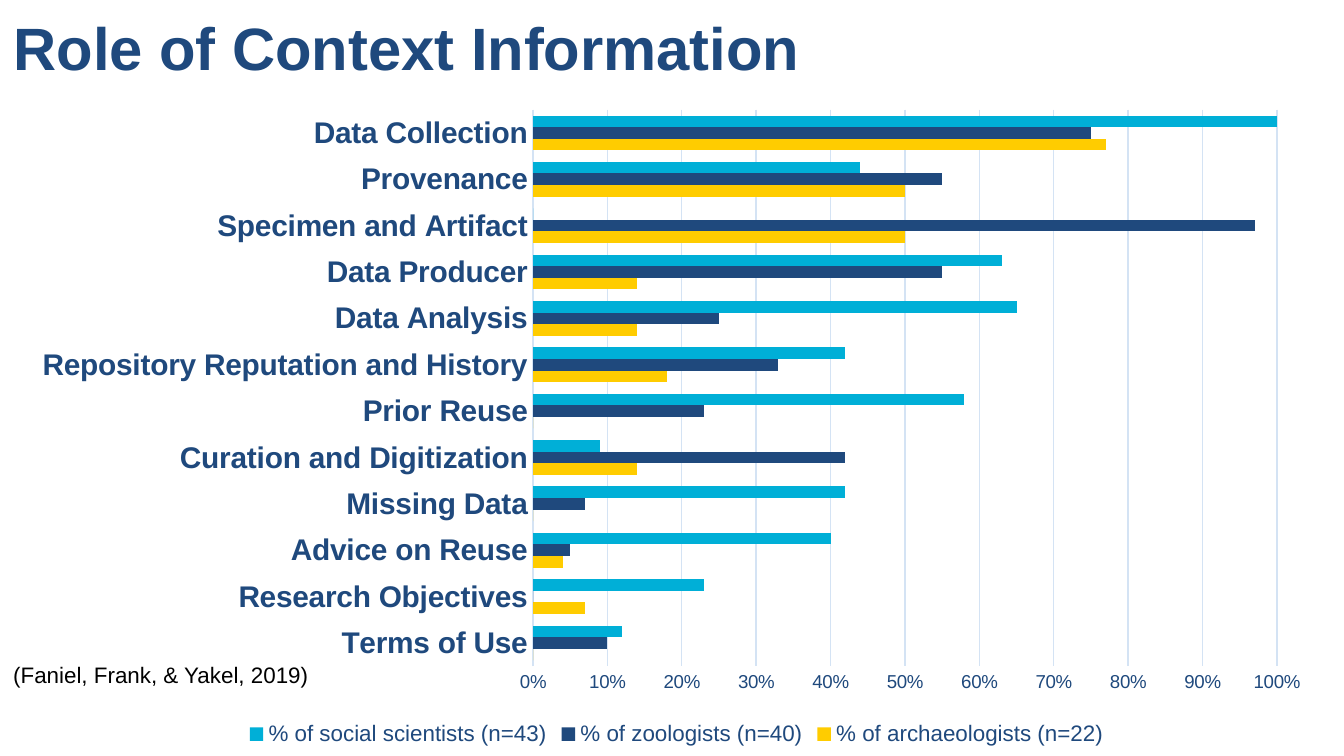
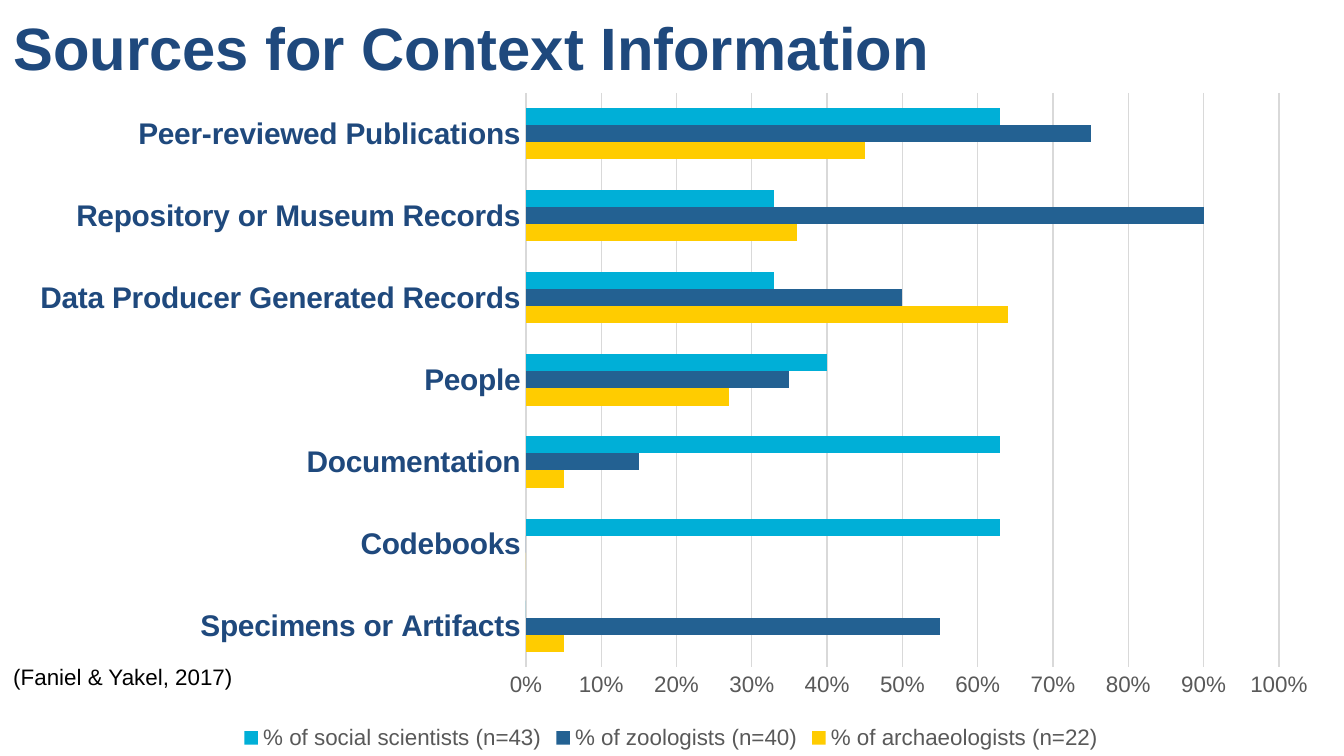
from dataclasses import dataclass

from lxml.etree import Element, SubElement
from pptx import Presentation
from pptx.chart.chart import Chart
from pptx.chart.data import CategoryChartData
from pptx.dml.color import RGBColor
from pptx.enum.chart import XL_CHART_TYPE, XL_LEGEND_POSITION, XL_TICK_MARK
from pptx.enum.text import MSO_ANCHOR, MSO_AUTO_SIZE, PP_ALIGN
from pptx.oxml.ns import qn
from pptx.slide import Slide
from pptx.text.text import Font
from pptx.util import Inches, Pt

WIDE, HIGH = Inches(10), Inches(5.625)
TITLE_ONLY = 5


@dataclass(frozen=True)
class Theme:
    face: str = "Arial"
    navy: str = "1F497D"
    steel: str = "236192"
    cyan: str = "00AFD7"
    gold: str = "FFCC00"
    ink: str = "000000"
    gray: str = "595959"
    pale: str = "D4E3F4"
    silver: str = "D9D9D9"
    head: int = 32
    label: int = 16
    note: int = 12
    tick: int = 10
    rule: float = 0.75


THEME = Theme()


@dataclass(frozen=True)
class Area:
    """A box in percent of the slide's width and height."""
    left: float
    top: float
    width: float
    height: float

    def lengths(self) -> tuple[int, int, int, int]:
        return (int(WIDE * self.left / 100), int(HIGH * self.top / 100),
                int(WIDE * self.width / 100), int(HIGH * self.height / 100))


@dataclass(frozen=True)
class Look:
    """What sets one chart's style apart."""
    middle: str
    text: str
    grid: str
    ticks: int
    gap: int


@dataclass(frozen=True)
class Page:
    title: str
    cite: str
    head: Area
    plot: Area
    foot: Area
    look: Look
    rows: dict[str, tuple[int, int, int]]


# Groups run top to bottom, as do the percentages in each row
GROUPS = ("% of social scientists (n=43)", "% of zoologists (n=40)",
          "% of archaeologists (n=22)")
# Inner plot as shares of the chart frame
INNER = {"x": 0.39, "y": 0.02, "w": 0.57, "h": 0.85}

PAGES = (
    Page(
        "Role of Context Information",
        "(Faniel, Frank, & Yakel, 2019)",
        Area(0, 0.5, 92.3, 13.3),
        Area(1.8, 12.8, 97.1, 86.6),
        Area(0, 86.6, 24.7, 5.3),
        Look(THEME.navy, THEME.navy, THEME.pale, THEME.tick, 100),
        {
            "Data Collection": (100, 75, 77),
            "Provenance": (44, 55, 50),
            "Specimen and Artifact": (0, 97, 50),
            "Data Producer": (63, 55, 14),
            "Data Analysis": (65, 25, 14),
            "Repository Reputation and History": (42, 33, 18),
            "Prior Reuse": (58, 23, 0),
            "Curation and Digitization": (9, 42, 14),
            "Missing Data": (42, 7, 0),
            "Advice on Reuse": (40, 5, 4),
            "Research Objectives": (23, 0, 7),
            "Terms of Use": (12, 10, 0),
        },
    ),
    Page(
        "Sources for Context Information",
        "(Faniel & Yakel, 2017)",
        Area(0, 0.5, 70.7, 11.4),
        Area(0.8, 10.5, 98.3, 89.4),
        Area(0, 86.8, 18.5, 5.3),
        Look(THEME.steel, THEME.gray, THEME.silver, THEME.note, 182),
        {
            "Peer-reviewed Publications": (63, 75, 45),
            "Repository or Museum Records": (33, 90, 36),
            "Data Producer Generated Records": (33, 50, 64),
            "People": (40, 35, 27),
            "Documentation": (63, 15, 5),
            "Codebooks": (63, 0, 0),
            "Specimens or Artifacts": (0, 55, 5),
        },
    ),
)


def set_font(font: Font, size: int, color: str, bold: bool = False) -> None:
    font.name, font.size, font.bold = THEME.face, Pt(size), bold
    font.color.rgb = RGBColor.from_string(color)


def fill_text(shape, area: Area, text: str, size: int, color: str,
              bold: bool = False) -> None:
    shape.left, shape.top, shape.width, shape.height = area.lengths()
    frame = shape.text_frame
    frame.text = text
    frame.word_wrap = True
    frame.auto_size = MSO_AUTO_SIZE.NONE
    frame.vertical_anchor = MSO_ANCHOR.TOP
    line = frame.paragraphs[0]
    line.alignment = PP_ALIGN.LEFT
    set_font(line.font, size, color, bold)


def set_line(line, color: str) -> None:
    line.color.rgb = RGBColor.from_string(color)
    line.width = Pt(THEME.rule)


def place_plot(chart: Chart) -> None:
    area = chart._chartSpace.chart.plotArea
    for old in area.findall(qn("c:layout")):
        area.remove(old)
    layout = Element(qn("c:layout"))
    manual = SubElement(layout, qn("c:manualLayout"))
    parts = {"layoutTarget": "inner", "xMode": "edge", "yMode": "edge", **INNER}
    for name, value in parts.items():
        SubElement(manual, qn(f"c:{name}")).set("val", str(value))
    area.insert(0, layout)


def style_axes(chart: Chart, look: Look) -> None:
    names, scale = chart.category_axis, chart.value_axis
    for axis in (names, scale):
        axis.major_tick_mark = axis.minor_tick_mark = XL_TICK_MARK.NONE
    names.has_major_gridlines = False
    set_font(names.tick_labels.font, THEME.label, THEME.navy, True)
    set_line(names.format.line, look.grid)

    scale.minimum_scale, scale.maximum_scale, scale.major_unit = 0, 1, 0.1
    scale.has_major_gridlines = True
    set_line(scale.major_gridlines.format.line, look.grid)
    scale.format.line.fill.background()
    scale.tick_labels.number_format = "0%"
    scale.tick_labels.number_format_is_linked = False
    set_font(scale.tick_labels.font, look.ticks, look.text)


def add_bars(slide: Slide, page: Page) -> None:
    look = page.look
    # Bars stack upward from the axis, so both orders are turned round
    data = CategoryChartData(number_format="0%")
    data.categories = list(reversed(page.rows))
    columns = list(zip(*reversed(page.rows.values())))
    for name, column in reversed(list(zip(GROUPS, columns))):
        data.add_series(name, [value / 100 for value in column])
    chart = slide.shapes.add_chart(
        XL_CHART_TYPE.BAR_CLUSTERED, *page.plot.lengths(), data).chart
    chart.has_title = False
    set_font(chart.font, THEME.tick, THEME.ink)

    # Bars
    bars = chart.plots[0]
    bars.gap_width, bars.overlap, bars.vary_by_categories = look.gap, 0, False
    for group, color in zip(bars.series, (THEME.gold, look.middle, THEME.cyan)):
        group.format.fill.solid()
        group.format.fill.fore_color.rgb = RGBColor.from_string(color)

    # Legend
    chart.has_legend = True
    chart.legend.position = XL_LEGEND_POSITION.BOTTOM
    chart.legend.include_in_layout = False
    set_font(chart.legend.font, THEME.note, look.text)

    style_axes(chart, look)
    place_plot(chart)


def add_page(deck, page: Page) -> None:
    slide = deck.slides.add_slide(deck.slide_layouts[TITLE_ONLY])
    add_bars(slide, page)
    fill_text(slide.shapes.title, page.head, page.title,
              THEME.head, THEME.navy, True)
    note = slide.shapes.add_textbox(*page.foot.lengths())
    fill_text(note, page.foot, page.cite, THEME.note, THEME.ink)


def main() -> None:
    deck = Presentation()
    deck.slide_width, deck.slide_height = WIDE, HIGH
    for page in PAGES:
        add_page(deck, page)
    deck.save("out.pptx")


if __name__ == "__main__":
    main()
